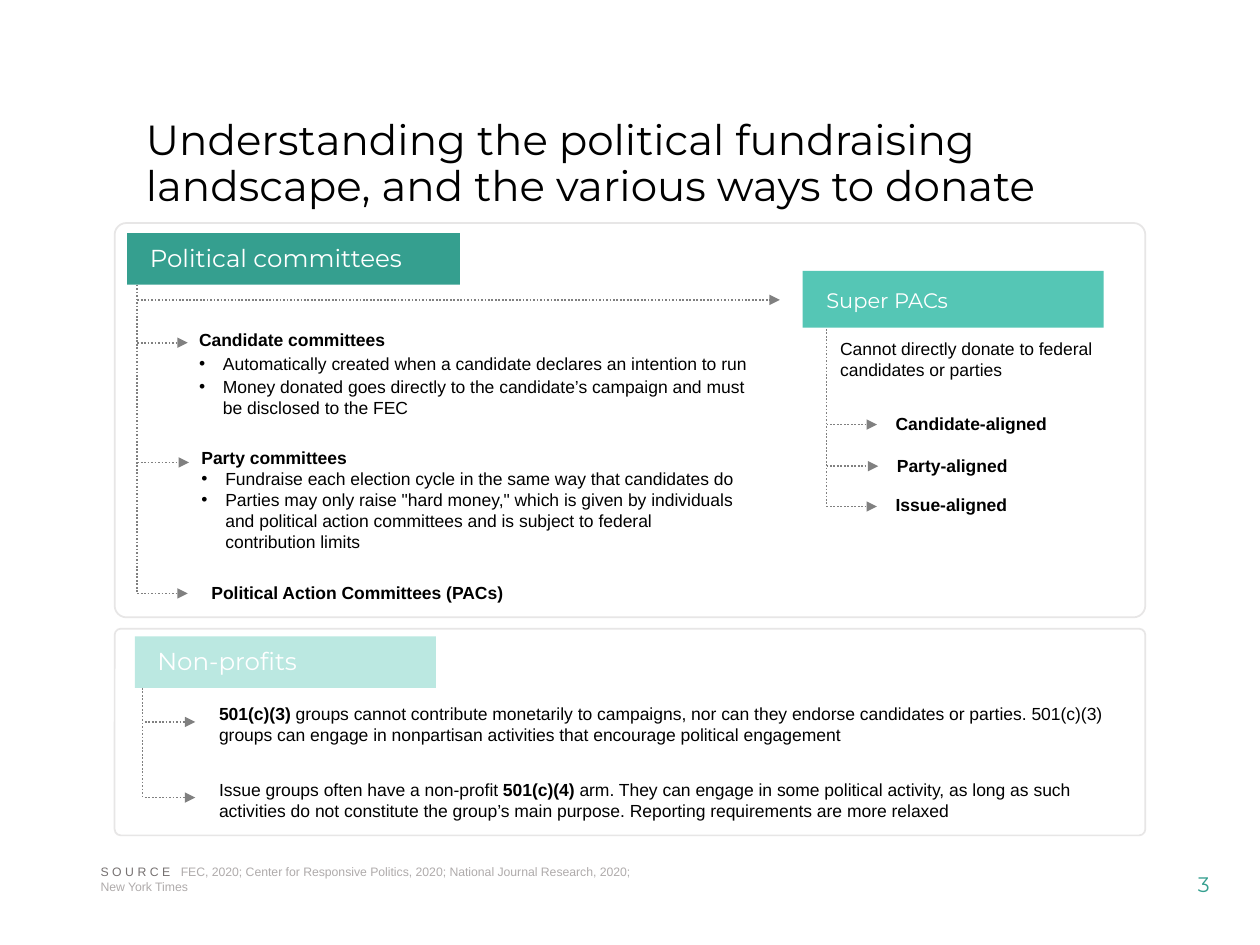
from dataclasses import dataclass

from lxml.etree import SubElement
from pptx import Presentation
from pptx.dml.color import RGBColor
from pptx.enum.dml import MSO_LINE
from pptx.enum.shapes import MSO_CONNECTOR, MSO_SHAPE
from pptx.enum.text import MSO_ANCHOR, PP_ALIGN
from pptx.oxml.ns import qn
from pptx.util import Emu, Inches, Pt

COLORS = {
    "black": "000000", "white": "FFFFFF", "dark_teal": "359F8F", "teal": "55C6B5",
    "pale_teal": "BBE8E1", "rule": "808080", "frame": "E7E6E6",
    "source_label": "767171", "source_text": "AFABAB",
}
COLUMNS, ROWS = 1000, 750
WIDTH, HEIGHT = Inches(10), Inches(7.5)
BODY = {"name": "Arial", "size": Pt(10), "bold": False}
BOLD = BODY | {"bold": True}
SMALL = BODY | {"size": Pt(7)}


def heading(size: int) -> dict:
    return {"name": "Montserrat", "size": Pt(size), "bold": False}


@dataclass(frozen=True)
class Span:
    words: str
    format: dict
    color: str = "black"
    spacing: int = 0


@dataclass(frozen=True)
class Para:
    spans: tuple
    bullet: bool = False
    after: float = 0
    line_spacing: float = 1
    align: PP_ALIGN = PP_ALIGN.LEFT


@dataclass(frozen=True)
class Box:
    area: tuple
    paras: tuple
    fill: str = ""
    wrap: bool = True
    inset: bool = True
    anchor: MSO_ANCHOR = MSO_ANCHOR.TOP


@dataclass(frozen=True)
class Banner:
    area: tuple
    label_area: tuple
    label: str
    size: int
    fill: str


@dataclass(frozen=True)
class Branch:
    trunk: tuple
    start: int
    arrows: tuple


def plain(words: str, **options) -> Para:
    return Para((Span(words, BODY),), **options)


def bold(words: str, **options) -> Para:
    return Para((Span(words, BOLD),), **options)


def across(columns: int) -> Emu:
    return Emu(round(WIDTH * columns / COLUMNS))


def down(rows: int) -> Emu:
    return Emu(round(HEIGHT * rows / ROWS))


def place(area: tuple) -> tuple:
    left, top, width, height = area
    return across(left), down(top), across(width), down(height)


def rgb(name: str) -> RGBColor:
    return RGBColor.from_string(COLORS[name])


def assign(target, values: dict) -> None:
    for name, value in values.items():
        setattr(target, name, value)


def draw_rectangle(page, area: tuple, fill: str):
    shape = page.shapes.add_shape(MSO_SHAPE.RECTANGLE, *place(area))
    shape.shadow.inherit = False
    shape.fill.solid()
    shape.fill.fore_color.rgb = rgb(fill)
    shape.line.fill.background()
    return shape


def write_para(paragraph, para: Para) -> None:
    assign(paragraph, {"alignment": para.align, "space_after": Pt(para.after),
                       "line_spacing": para.line_spacing})
    if para.bullet:
        properties = paragraph._p.get_or_add_pPr()
        properties.set("marL", str(Inches(0.19)))
        properties.set("indent", str(Inches(-0.19)))
        SubElement(properties, qn("a:buFont")).set("typeface", "Arial")
        SubElement(properties, qn("a:buChar")).set("char", "•")
    for span in para.spans:
        run = paragraph.add_run()
        run.text = span.words
        assign(run.font, span.format)
        run.font.color.rgb = rgb(span.color)
        if span.spacing:
            run._r.get_or_add_rPr().set("spc", str(span.spacing * 100))


def draw_box(page, box: Box) -> None:
    if box.fill:
        shape = draw_rectangle(page, box.area, box.fill)
    else:
        shape = page.shapes.add_textbox(*place(box.area))
    frame = shape.text_frame
    assign(frame, {"word_wrap": box.wrap, "vertical_anchor": box.anchor})
    if not box.inset:
        sides = ("left", "top", "right", "bottom")
        assign(frame, {f"margin_{side}": 0 for side in sides})
    for index, para in enumerate(box.paras):
        write_para(frame.paragraphs[0] if index == 0 else frame.add_paragraph(), para)


def draw_banner(page, banner: Banner) -> None:
    draw_rectangle(page, banner.area, banner.fill)
    label = Span(banner.label, heading(banner.size), "white")
    draw_box(page, Box(banner.label_area, (Para((label,)),), wrap=False))


def draw_line(page, start: tuple, end: tuple, arrow: bool = False) -> None:
    line = page.shapes.add_connector(MSO_CONNECTOR.STRAIGHT, across(start[0]), down(start[1]),
                                     across(end[0]), down(end[1]))
    line.line.color.rgb = rgb("rule")
    assign(line.line, {"width": Pt(1), "dash_style": MSO_LINE.ROUND_DOT})
    if arrow:
        SubElement(line.line._get_or_add_ln(), qn("a:tailEnd")).set("type", "triangle")
    SubElement(line._element.spPr, qn("a:effectLst"))


def draw_branch(page, branch: Branch) -> None:
    column, top, bottom = branch.trunk
    draw_line(page, (column, top), (column, bottom))
    for row, end in branch.arrows:
        draw_line(page, (branch.start, row), (end, row), arrow=True)


def draw_frame(page, area: tuple) -> None:
    shape = page.shapes.add_shape(MSO_SHAPE.ROUNDED_RECTANGLE, *place(area))
    shape.shadow.inherit = False
    shape.adjustments[0] = 0.03
    shape.fill.background()
    shape.line.color.rgb = rgb("frame")
    shape.line.width = Pt(1)


BOXES = (
    Box((911, 682, 89, 40), (Para((Span("3", heading(12), "dark_teal"),),
                                  align=PP_ALIGN.CENTER),), anchor=MSO_ANCHOR.MIDDLE),
    Box((106, 90, 803, 79), (Para((Span(
        "Understanding the political fundraising landscape, and the various ways to donate",
        heading(24)),), line_spacing=0.9),)),
    Box((158, 261, 443, 72), (
        bold("Candidate committees", after=1.5),
        plain("Automatically created when a candidate declares an intention to run",
              bullet=True, after=1.5),
        plain("Money donated goes directly to the candidate’s campaign and must be disclosed "
              "to the FEC", bullet=True, after=1.5)), "white", inset=False),
    Box((158, 457, 350, 27), (bold("Political Action Committees (PACs)"),), "white"),
    Box((150, 350, 449, 94), (
        bold("Party committees"),
        plain("Fundraise each election cycle in the same way that candidates do", bullet=True),
        plain('Parties may only raise "hard money," which is given by individuals and political '
              "action committees and is subject to federal contribution limits",
              bullet=True)), "white"),
    Box((657, 263, 260, 44), (
        plain("Cannot directly donate to federal candidates or parties", after=1.5),), "white"),
    Box((701, 387, 268, 27), (bold("Issue-aligned"),), "white"),
    Box((702, 356, 272, 27), (bold("Party-aligned"),), "white"),
    Box((701, 323, 299, 27), (bold("Candidate-aligned"),), "white"),
    Box((164, 613, 739, 44), (Para((
        Span("Issue groups often have a non-profit ", BODY), Span("501(c)(4) ", BOLD),
        Span("arm. They can engage in some political activity, as long as such activities do not "
             "constitute the group’s main purpose. Reporting requirements are more relaxed",
             BODY))),), "white"),
    Box((164, 553, 745, 44), (Para((
        Span("501(c)(3) ", BOLD),
        Span("groups cannot contribute monetarily to campaigns, nor can they endorse candidates "
             "or parties. 501(c)(3) groups can engage in nonpartisan activities that encourage "
             "political engagement", BODY))),), "white"),
    Box((70, 681, 455, 34), (Para((
        Span("SOURCE ", SMALL, "source_label", 2),
        Span("FEC, 2020; Center for Responsive Politics, 2020; National Journal Research, 2020; "
             "New York Times", SMALL, "source_text"))),)),
)
BANNERS = (
    Banner((101, 185, 264, 41), (109, 188, 242, 34), "Political committees", 14, "dark_teal"),
    Banner((637, 215, 239, 45), (646, 223, 126, 30), "Super PACs", 12, "teal"),
    Banner((107, 505, 239, 41), (115, 508, 140, 34), "Non-profits", 14, "pale_teal"),
)
BRANCHES = (
    Branch((109, 226, 471), 109, ((238, 619), (272, 149), (367, 150), (471, 149))),
    Branch((656, 261, 402), 656, ((337, 696), (370, 697), (402, 696))),
    Branch((113, 546, 633), 115, ((573, 155), (633, 155))),
)
FRAMES = ((91, 177, 818, 313), (91, 499, 818, 164))


def main() -> None:
    deck = Presentation()
    assign(deck, {"slide_width": WIDTH, "slide_height": HEIGHT})
    page = deck.slides.add_slide(deck.slide_layouts[6])
    for draw, items in ((draw_box, BOXES), (draw_banner, BANNERS),
                        (draw_branch, BRANCHES), (draw_frame, FRAMES)):
        for item in items:
            draw(page, item)
    deck.save("out.pptx")


if __name__ == "__main__":
    main()
